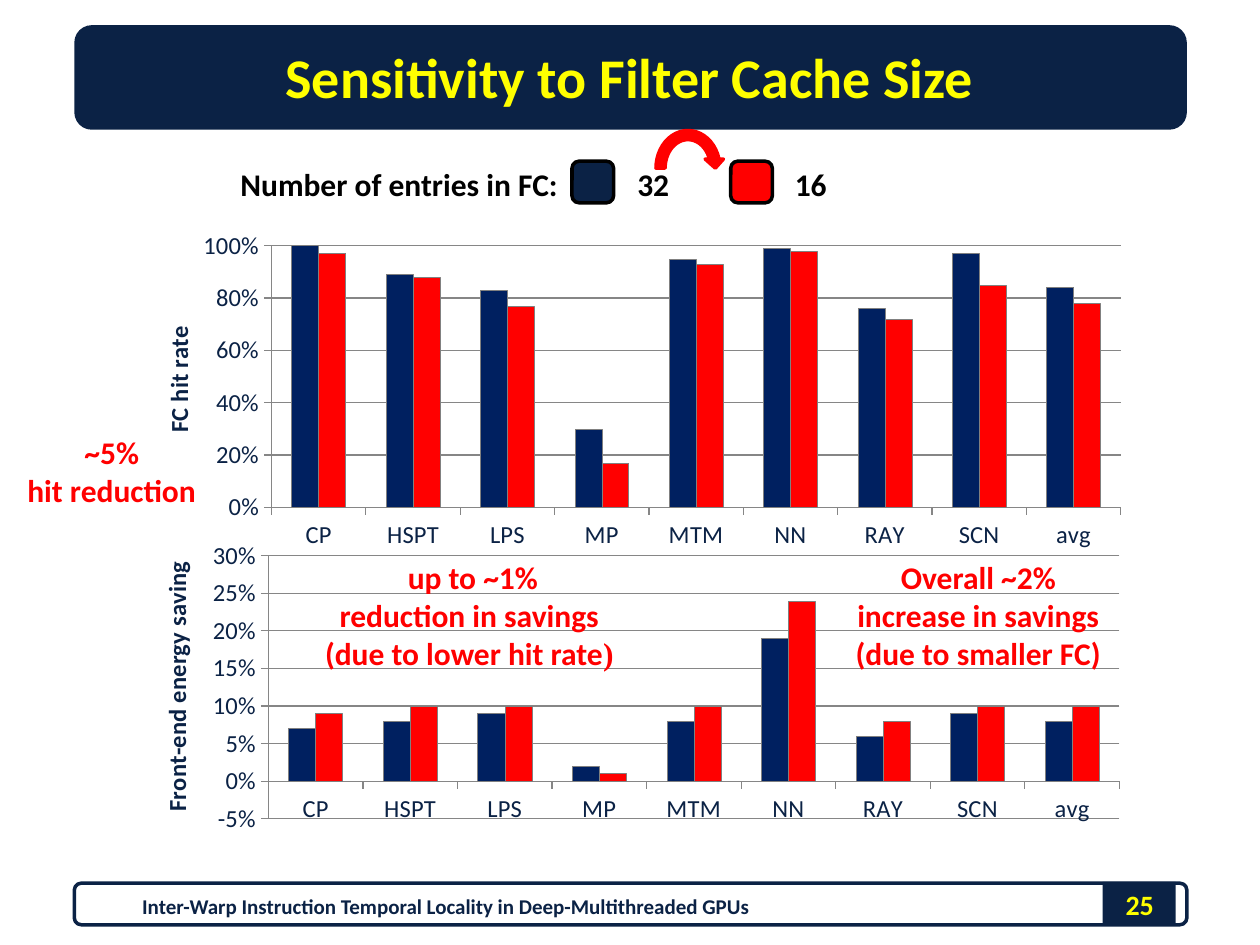
"""Build the slide on sensitivity to filter cache size, with two bar charts."""
from lxml import etree
from pptx import Presentation
from pptx.chart.data import CategoryChartData
from pptx.dml.color import RGBColor
from pptx.enum.chart import XL_CHART_TYPE, XL_TICK_MARK
from pptx.enum.shapes import MSO_SHAPE
from pptx.enum.text import MSO_ANCHOR, MSO_AUTO_SIZE, PP_ALIGN
from pptx.oxml.ns import qn
from pptx.util import Inches, Pt

RECT, ROUNDED, ARROW = MSO_SHAPE.RECTANGLE, MSO_SHAPE.ROUNDED_RECTANGLE, MSO_SHAPE.CIRCULAR_ARROW
COLUMNS = XL_CHART_TYPE.COLUMN_CLUSTERED
OUTSIDE, NO_TICK = XL_TICK_MARK.OUTSIDE, XL_TICK_MARK.NONE
LEFT, CENTER = PP_ALIGN.LEFT, PP_ALIGN.CENTER
MIDDLE, TOP = MSO_ANCHOR.MIDDLE, MSO_ANCHOR.TOP
NAVY, YELLOW, RED, BLACK, GRAY = "0B2245", "FFFF00", "FF0000", "000000", "868686"
FONT = "Calibri"


def rgb(value):
    return RGBColor.from_string(value)


def style(font, size, color, bold=True):
    font.name, font.size, font.bold = FONT, Pt(size), bold
    font.color.rgb = rgb(color)


prs = Presentation()
prs.slide_width, prs.slide_height = Inches(10), Inches(7.5)
slide = prs.slides.add_slide(prs.slide_layouts[5])
shapes = slide.shapes

panels = [
    (RECT, 8.75, 7, 0.58, 0.33, NAVY, None),
    (ROUNDED, 0.59, 7.01, 8.83, 0.33, None, NAVY),
    (ROUNDED, 0.59, 0.2, 8.83, 0.83, NAVY, None),
    (ROUNDED, 4.54, 1.28, 0.33, 0.33, NAVY, BLACK),
    (ROUNDED, 5.8, 1.28, 0.33, 0.33, RED, BLACK),
    (ARROW, 5.17, 1, 0.58, 0.67, RED, RED),
]
for kind, left, top, width, height, fill, outline in panels:
    panel = shapes.add_shape(kind, Inches(left), Inches(top), Inches(width), Inches(height))
    panel.shadow.inherit = False
    if fill:
        panel.fill.solid()
        panel.fill.fore_color.rgb = rgb(fill)
    else:
        panel.fill.background()
    if outline:
        panel.line.color.rgb = rgb(outline)
        panel.line.width = Pt(2)
    else:
        panel.line.fill.background()

title = shapes.title
title.left, title.top, title.width, title.height = Inches(0.5), Inches(0.17), Inches(9), Inches(0.87)
title.text_frame.text = "Sensitivity to Filter Cache Size"
title.text_frame.vertical_anchor = MIDDLE
title.text_frame.paragraphs[0].alignment = CENTER
style(title.text_frame.paragraphs[0].font, 32, YELLOW)
shapes.element.append(title.element)

benchmarks = ["CP", "HSPT", "LPS", "MP", "MTM", "NN", "RAY", "SCN", "avg"]
charts = [
    ("FC hit rate", (1.13, 1.83, 7.77, 2.58), (0.132, 0.046, 0.868, 0.806), (0.015, 0.28), (0, 1, 0.2),
     [1, 0.89, 0.83, 0.3, 0.95, 0.99, 0.76, 0.97, 0.84],
     [0.97, 0.88, 0.77, 0.17, 0.93, 0.98, 0.72, 0.85, 0.78]),
    ("Front-end energy saving", (1.13, 4.29, 7.76, 2.59), (0.129, 0.046, 0.871, 0.807), (0.013, 0.05),
     (-0.05, 0.3, 0.05),
     [0.07, 0.08, 0.09, 0.02, 0.08, 0.19, 0.06, 0.09, 0.08],
     [0.09, 0.1, 0.1, 0.01, 0.1, 0.24, 0.08, 0.1, 0.1]),
]
for measure, box, plot_box, measure_corner, (low, high, step), entries_32, entries_16 in charts:
    data = CategoryChartData(number_format="0%")
    data.categories = benchmarks
    data.add_series("Series 1", entries_32)
    data.add_series("Series 2", entries_16)
    chart = shapes.add_chart(COLUMNS, *(Inches(v) for v in box), data).chart
    chart.has_legend = chart.has_title = False
    style(chart.font, 14, NAVY, False)

    bars = chart.plots[0]
    bars.gap_width, bars.overlap, bars.vary_by_categories = 150, 0, False
    for series, color in zip(bars.series, ("002060", RED)):
        series.format.fill.solid()
        series.format.fill.fore_color.rgb = rgb(color)
        series.format.line.color.rgb = rgb("808080")
        series.format.line.width = Pt(0.25)
        series.invert_if_negative = False

    rates = chart.value_axis
    rates.minimum_scale, rates.maximum_scale, rates.major_unit = low, high, step
    rates.tick_labels.number_format = "0%"
    rates.tick_labels.number_format_is_linked = False
    rates.has_major_gridlines = True
    rates.major_gridlines.format.line.color.rgb = rgb(GRAY)
    rates.axis_title.text_frame.text = measure
    style(rates.axis_title.text_frame.paragraphs[0].font, 14, NAVY)
    for axis in (rates, chart.category_axis):
        axis.major_tick_mark, axis.minor_tick_mark = OUTSIDE, NO_TICK
        axis.format.line.color.rgb = rgb(GRAY)

    edges = [("xMode", "edge"), ("yMode", "edge")]
    placements = [
        (bars._element.getparent(), 0, [("layoutTarget", "inner"), *edges, *zip("xywh", plot_box)]),
        (rates.axis_title._element, 1, [*edges, *zip("xy", measure_corner)]),
    ]
    for parent, position, settings in placements:
        for old in parent.findall(qn("c:layout")):
            parent.remove(old)
        layout = etree.Element(qn("c:layout"))
        manual = etree.SubElement(layout, qn("c:manualLayout"))
        for tag, value in settings:
            etree.SubElement(manual, qn(f"c:{tag}")).set("val", str(value))
        parent.insert(position, layout)

labels = [
    (8.67, 6.98, 0.75, 0.4, 16, YELLOW, CENTER, MIDDLE, True, ["25"]),
    (0.75, 6.99, 5.58, 0.4, 12, NAVY, CENTER, MIDDLE, True,
     ["Inter-Warp Instruction Temporal Locality in Deep-Multithreaded GPUs"]),
    (4.96, 1.26, 0.46, 0.4, 18, BLACK, LEFT, TOP, False, ["32"]),
    (6.21, 1.26, 0.46, 0.4, 18, BLACK, LEFT, TOP, False, ["16"]),
    (1.81, 1.26, 2.74, 0.4, 18, BLACK, LEFT, TOP, False, ["Number of entries in FC:"]),
    (0.11, 3.39, 1.61, 0.71, 18, RED, CENTER, TOP, False, ["~5% ", "hit reduction "]),
    (2.47, 4.38, 2.51, 1.01, 18, RED, CENTER, TOP, False,
     [" up to ~1%", "reduction in savings", "(due to lower hit rate"]),
    (6.68, 4.38, 2.17, 1.01, 18, RED, CENTER, TOP, False,
     ["Overall ~2%", "increase in savings", "(due to smaller FC)"]),
]
for left, top, width, height, size, color, align, anchor, wrap, lines in labels:
    frame = shapes.add_textbox(Inches(left), Inches(top), Inches(width), Inches(height)).text_frame
    frame.word_wrap, frame.vertical_anchor = wrap, anchor
    frame.auto_size = MSO_AUTO_SIZE.NONE if wrap else MSO_AUTO_SIZE.SHAPE_TO_FIT_TEXT
    frame.text = "\n".join(lines)
    for paragraph in frame.paragraphs:
        paragraph.alignment = align
        style(paragraph.font, size, color)
        if paragraph.text == "(due to lower hit rate":
            bracket = paragraph.add_run()
            bracket.text = ")"
            bracket.font.name = "Times New Roman"

prs.save("out.pptx")
